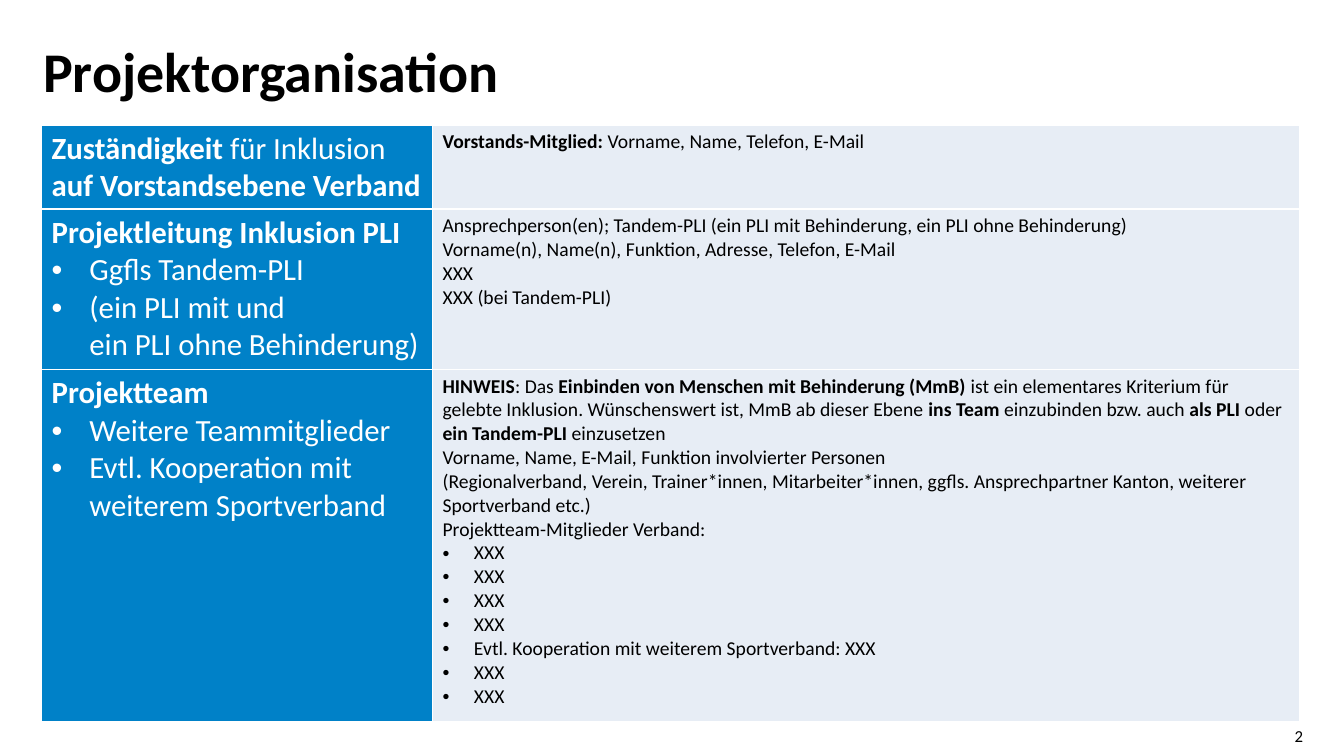
"""Build the project organisation slide with its table of responsibilities."""
from copy import deepcopy

from pptx import Presentation
from pptx.dml.color import RGBColor
from pptx.enum.text import MSO_ANCHOR, PP_ALIGN
from pptx.oxml.ns import qn
from pptx.oxml.xmlchemy import OxmlElement
from pptx.util import Cm, Pt

TOP, MIDDLE = MSO_ANCHOR.TOP, MSO_ANCHOR.MIDDLE
LEFT, RIGHT = PP_ALIGN.LEFT, PP_ALIGN.RIGHT
BLACK = RGBColor(0x00, 0x00, 0x00)
WHITE = RGBColor(0xFF, 0xFF, 0xFF)
BLUE = RGBColor(0x00, 0x81, 0xC8)
PALE = RGBColor(0xE7, 0xED, 0xF5)
FONT = "Calibri"
BULLET = "• "
BOLD = "**"

COLUMN_WIDTHS = (9.85, 21.85)
ROW_HEIGHTS = (2.11, 4.04, 8.87)
COLUMN_STYLES = (
    {"fill": BLUE, "color": WHITE, "size": 22, "indent": 0.95},
    {"fill": PALE, "color": BLACK, "size": 14, "indent": 0.79},
)
ROWS = (
    (
        ("**Zuständigkeit **für Inklusion **auf Vorstandsebene Verband**",),
        ("**Vorstands-Mitglied: **Vorname, Name, Telefon, E-Mail",),
    ),
    (
        (
            "**Projektleitung Inklusion PLI**",
            "• Ggfls Tandem-PLI",
            "• (ein PLI mit und \nein PLI ohne Behinderung)",
        ),
        (
            "Ansprechperson(en); Tandem-PLI (ein PLI mit Behinderung, ein PLI ohne Behinderung)",
            "Vorname(n), Name(n), Funktion, Adresse, Telefon, E-Mail",
            "XXX",
            "XXX (bei Tandem-PLI)",
        ),
    ),
    (
        (
            "**Projektteam**",
            "• Weitere Teammitglieder",
            "• Evtl. Kooperation mit weiterem Sportverband",
        ),
        (
            "**HINWEIS**: Das **Einbinden von Menschen mit Behinderung (MmB) **"
            "ist ein elementares Kriterium für gelebte Inklusion. Wünschenswert ist, "
            "MmB ab dieser Ebene **ins Team **einzubinden bzw. auch **als PLI **oder "
            "**ein Tandem-PLI **einzusetzen",
            "Vorname, Name, E-Mail, Funktion involvierter Personen \n"
            "(Regionalverband, Verein, Trainer*innen, Mitarbeiter*innen, ggfls. "
            "Ansprechpartner Kanton, weiterer Sportverband etc.)",
            "Projektteam-Mitglieder Verband:",
            *["• XXX"] * 4,
            "• Evtl. Kooperation mit weiterem Sportverband: XXX",
            *["• XXX"] * 2,
        ),
    ),
)


def add_run(paragraph, text, size, color, bold):
    """Add one formatted run to a paragraph."""
    run = paragraph.add_run()
    run.text = text
    for name, value in {"name": FONT, "size": Pt(size), "bold": bold}.items():
        setattr(run.font, name, value)
    run.font.color.rgb = color
    return run


def add_break(paragraph, run):
    """Add a line break that carries the format of the run before it."""
    paragraph.add_line_break()
    line_break = paragraph._p.findall(qn("a:br"))[-1]
    line_break.append(deepcopy(run._r.rPr))


def add_bullet(paragraph, indent):
    """Give a paragraph a round bullet with a hanging indent."""
    properties = paragraph._p.get_or_add_pPr()
    properties.set("marL", str(Cm(indent)))
    properties.set("indent", str(-Cm(indent)))
    for tag, name, value in (("a:buFont", "typeface", "Arial"), ("a:buChar", "char", "•")):
        element = OxmlElement(tag)
        element.set(name, value)
        properties.append(element)


def write_paragraph(paragraph, text, style):
    """Write text with bold marks, line breaks and an optional bullet."""
    if text.startswith(BULLET):
        add_bullet(paragraph, style["indent"])
        text = text.removeprefix(BULLET)
    for position, segment in enumerate(text.split(BOLD)):
        run = None
        for line in segment.split("\n") if segment else ():
            if run is not None:
                add_break(paragraph, run)
            run = add_run(paragraph, line, style["size"], style["color"], position % 2 == 1)


def add_borders(cell):
    """Draw thin white borders on every side of a cell."""
    properties = cell._tc.get_or_add_tcPr()
    for index, side in enumerate(("a:lnL", "a:lnR", "a:lnT", "a:lnB")):
        line = OxmlElement(side)
        line.set("w", str(Pt(1)))
        fill = OxmlElement("a:solidFill")
        color = OxmlElement("a:srgbClr")
        color.set("val", str(WHITE))
        fill.append(color)
        line.append(fill)
        properties.insert(index, line)


def fill_cell(cell, texts, style):
    """Fill a cell with colour, borders and paragraphs."""
    cell.fill.solid()
    cell.fill.fore_color.rgb = style["fill"]
    add_borders(cell)
    frame = cell.text_frame
    for index, text in enumerate(texts):
        paragraph = frame.add_paragraph() if index else frame.paragraphs[0]
        write_paragraph(paragraph, text, style)


def add_organisation_table(slide):
    """Add the table of responsibilities."""
    frame = slide.shapes.add_table(
        len(ROWS), len(COLUMN_WIDTHS), Cm(1.05), Cm(3.15),
        Cm(sum(COLUMN_WIDTHS)), Cm(sum(ROW_HEIGHTS)),
    )
    table = frame.table
    table.first_row = table.horz_banding = False
    for column, width in zip(table.columns, COLUMN_WIDTHS):
        column.width = Cm(width)
    for row, height, contents in zip(table.rows, ROW_HEIGHTS, ROWS):
        row.height = Cm(height)
        for cell, texts, style in zip(row.cells, contents, COLUMN_STYLES):
            fill_cell(cell, texts, style)


def add_label(slide, text, box, size, bold=False, anchor=TOP, alignment=LEFT, spacing=1.0):
    """Add a text box without margins."""
    frame = slide.shapes.add_textbox(*map(Cm, box)).text_frame
    settings = {"word_wrap": True, "vertical_anchor": anchor}
    settings |= dict.fromkeys(("margin_left", "margin_right", "margin_top", "margin_bottom"), 0)
    for name, value in settings.items():
        setattr(frame, name, value)
    paragraph = frame.paragraphs[0]
    paragraph.alignment = alignment
    paragraph.line_spacing = spacing
    add_run(paragraph, text, size, BLACK, bold)


def main():
    """Create and save the presentation."""
    presentation = Presentation()
    presentation.slide_width, presentation.slide_height = Cm(33.87), Cm(19.05)
    slide = presentation.slides.add_slide(presentation.slide_layouts[6])
    add_label(slide, "Projektorganisation", (1.09, 1.12, 25.4, 2.16), 40, bold=True, spacing=0.9)
    add_organisation_table(slide)
    add_label(slide, "2", (31.65, 18.29, 1.19, 0.51), 12, anchor=MIDDLE, alignment=RIGHT)
    presentation.save("out.pptx")


if __name__ == "__main__":
    main()
